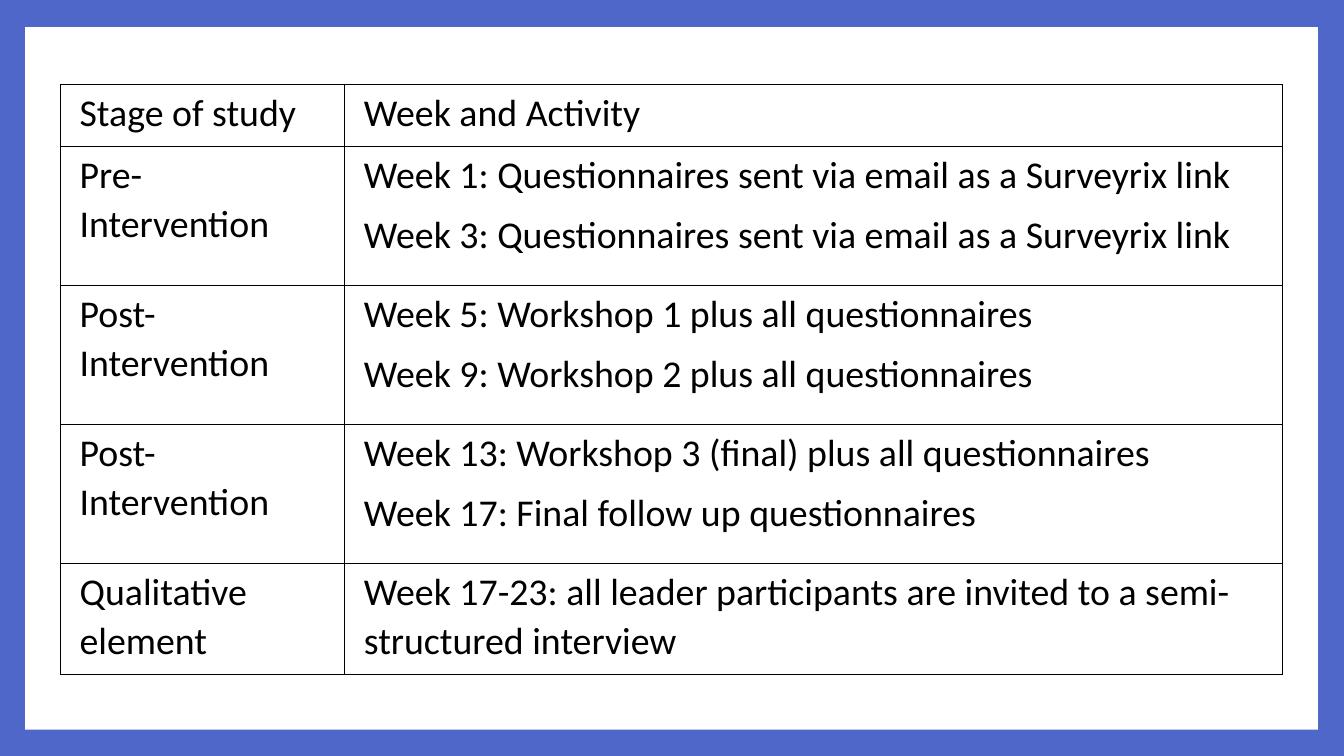
import pptx
import pptx.dml.color
import pptx.enum.shapes
import pptx.oxml
import pptx.oxml.ns
import pptx.util
from pptx.util import Inches

COLORS = {"frame": "4E67C8", "panel": "FFFFFF", "ink": "000000"}

# stage, activities, row height
ROWS = [
    ("Stage of study", ["Week and Activity"], 0.61),
    ("Pre-Intervention", [
        "Week 1: Questionnaires sent via email as a Surveyrix link",
        "Week 3: Questionnaires sent via email as a Surveyrix link",
    ], 1.38),
    ("Post-Intervention", [
        "Week 5: Workshop 1 plus all questionnaires",
        "Week 9: Workshop 2 plus all questionnaires",
    ], 1.38),
    ("Post-Intervention", [
        "Week 13: Workshop 3 (final) plus all questionnaires",
        "Week 17: Final follow up questionnaires",
    ], 1.38),
    ("Qualitative element", [
        "Week 17-23: all leader participants are invited to a semi-structured interview",
    ], 1.1),
]
COLUMN_WIDTHS = [2.82, 9.3]


def color(name):
    return pptx.dml.color.RGBColor.from_string(COLORS[name])


def add_borders(cell):
    """Draw a 1 pt line on all four sides; call before filling the cell."""
    properties = cell._tc.get_or_add_tcPr()
    for side in ("lnL", "lnR", "lnT", "lnB"):
        properties.append(pptx.oxml.parse_xml(
            f'<a:{side} {pptx.oxml.ns.nsdecls("a")} w="{pptx.util.Pt(1)}">'
            f'<a:solidFill><a:srgbClr val="{COLORS["ink"]}"/></a:solidFill></a:{side}>'))


def write_cell(cell, lines):
    add_borders(cell)
    cell.fill.background()
    cell.margin_left = cell.margin_right = Inches(0.19)
    cell.margin_top, cell.margin_bottom = Inches(0.03), 0
    cell.text = "\n".join(lines)
    for paragraph in cell.text_frame.paragraphs:
        paragraph.line_spacing = 1.07
        paragraph.space_after = pptx.util.Pt(8)
        paragraph.font.name = "Calibri"
        paragraph.font.size = pptx.util.Pt(27)
        paragraph.font.bold = False
        paragraph.font.color.rgb = color("ink")


def main():
    presentation = pptx.Presentation()
    presentation.slide_width, presentation.slide_height = Inches(13.33), Inches(7.5)
    slide = presentation.slides.add_slide(presentation.slide_layouts[6])
    slide.background.fill.solid()
    slide.background.fill.fore_color.rgb = color("frame")

    panel = slide.shapes.add_shape(
        pptx.enum.shapes.MSO_SHAPE.RECTANGLE,
        Inches(0.25), Inches(0.27), Inches(12.82), Inches(6.97))
    panel.shadow.inherit = False
    panel.fill.solid()
    panel.fill.fore_color.rgb = color("panel")
    panel.line.fill.background()

    table = slide.shapes.add_table(
        len(ROWS), len(COLUMN_WIDTHS), Inches(0.6), Inches(0.84),
        Inches(sum(COLUMN_WIDTHS)), Inches(sum(row[2] for row in ROWS))).table
    table.first_row = table.horz_banding = False
    for column, width in zip(table.columns, COLUMN_WIDTHS):
        column.width = Inches(width)
    for index, (stage, activities, height) in enumerate(ROWS):
        table.rows[index].height = Inches(height)
        write_cell(table.cell(index, 0), [stage])
        write_cell(table.cell(index, 1), activities)

    presentation.save("out.pptx")


if __name__ == "__main__":
    main()
